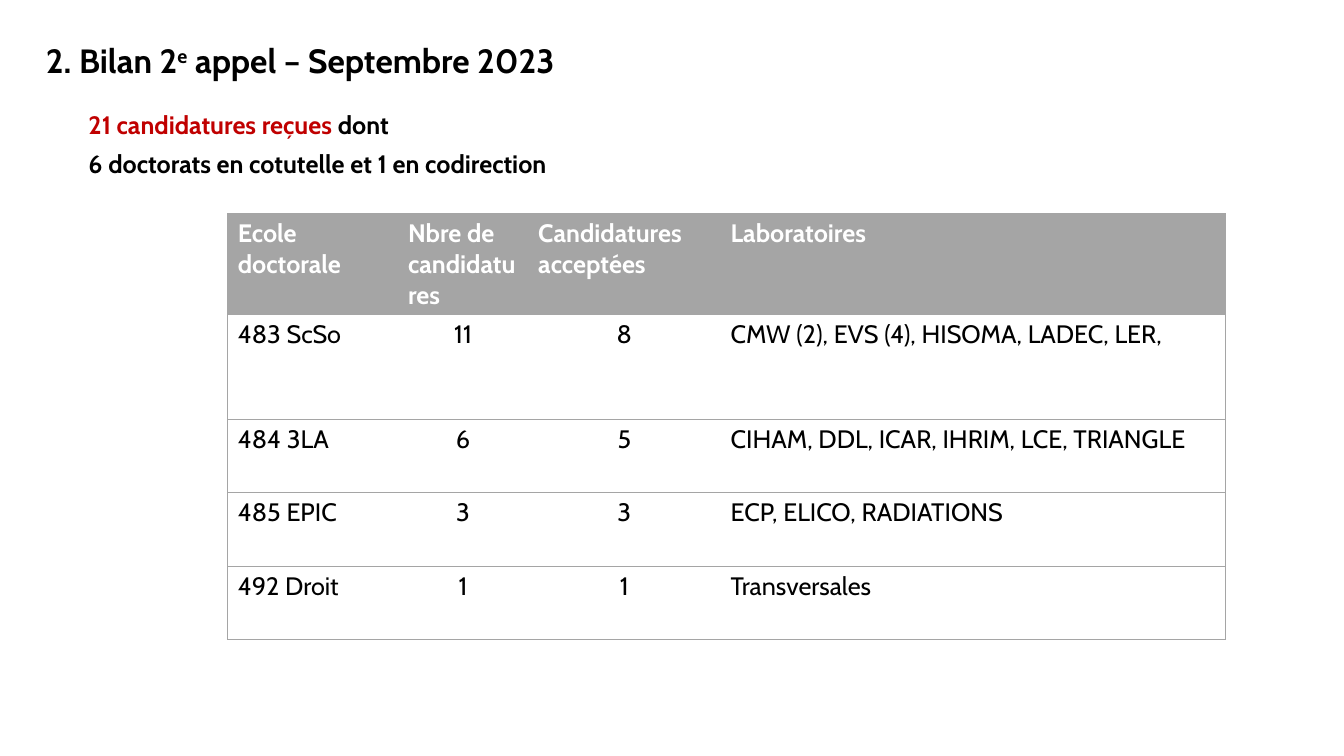
from pptx import Presentation
from pptx.dml.color import RGBColor
from pptx.enum.text import PP_ALIGN
from pptx.oxml import parse_xml
from pptx.oxml.ns import nsdecls
from pptx.util import Cm, Pt

FONT = "Cabin"
HEX = {"ink": "000000", "red": "C00000", "gray": "A5A5A5", "white": "FFFFFF"}
COLS = [4.29, 3.28, 4.85, 12.73]
ROWS = [1.85, 2.64, 1.85, 1.85, 1.85]
DATA = [
    ["Ecole doctorale", "Nbre de candidatures", "Candidatures acceptées", "Laboratoires"],
    ["483 ScSo", "11", "8", "CMW (2), EVS (4), HISOMA, LADEC, LER,"],
    ["484 3LA", "6", "5", "CIHAM, DDL, ICAR, IHRIM, LCE, TRIANGLE"],
    ["485 EPIC", "3", "3", "ECP, ELICO, RADIATIONS"],
    ["492 Droit", "1", "1", "Transversales"],
]


def add_run(para, text, size=18, color="ink", bold=True, base=0):
    run = para.add_run()
    run.text = text
    font = run.font
    font.name, font.size, font.bold = FONT, Pt(size), bold
    font.color.rgb = RGBColor.from_string(HEX[color])
    if base:
        run._r.get_or_add_rPr().set("baseline", str(base * 1000))


def add_box(slide, left, top, width, height, paras):
    """Each paragraph is a list of (text, format) pairs."""
    frame = slide.shapes.add_textbox(Cm(left), Cm(top), Cm(width), Cm(height)).text_frame
    frame.word_wrap = True
    for i, runs in enumerate(paras):
        para = frame.add_paragraph() if i else frame.paragraphs[0]
        para.space_after = Pt(6)
        for text, style in runs:
            add_run(para, text, **style)


def set_lines(cell, sides):
    """Draw gray lines on the given sides and none on the others."""
    props = cell._tc.get_or_add_tcPr()
    for side in "LRTB":
        if side in sides:
            paint = f'<a:solidFill><a:srgbClr val="{HEX["gray"]}"/></a:solidFill>'
        else:
            paint = "<a:noFill/>"
        props.append(parse_xml(
            f'<a:ln{side} {nsdecls("a")} w="{Pt(0.5)}">{paint}</a:ln{side}>'))


def add_grid(slide, left, top):
    shape = slide.shapes.add_table(len(ROWS), len(COLS), Cm(left), Cm(top),
                                   Cm(sum(COLS)), Cm(sum(ROWS)))
    table = shape.table
    table.horz_banding = False
    for col, width in zip(table.columns, COLS):
        col.width = Cm(width)
    for row, height in zip(table.rows, ROWS):
        row.height = Cm(height)
    for r, texts in enumerate(DATA):
        for c, text in enumerate(texts):
            cell = table.cell(r, c)
            head = r == 0
            # Outer frame and row rules
            edge = {0: "L", len(COLS) - 1: "R"}.get(c, "")
            set_lines(cell, "TB" + edge)
            if head:
                cell.fill.solid()
                cell.fill.fore_color.rgb = RGBColor.from_string(HEX["gray"])
            else:
                cell.fill.background()
            # Counts are centred
            para = cell.text_frame.paragraphs[0]
            if not head and c in (1, 2):
                para.alignment = PP_ALIGN.CENTER
            add_run(para, text, color="white" if head else "ink", bold=head)


def main():
    deck = Presentation()
    deck.slide_width, deck.slide_height = Cm(33.87), Cm(19.05)
    slide = deck.slides.add_slide(deck.slide_layouts[6])

    # Title
    big = {"size": 24}
    add_box(slide, 0.91, 0.89, 32.03, 1.27, [
        [("2. Bilan 2", big), ("e", {"size": 24, "base": 30}),
         (" appel – Septembre 2023", big)]])

    # Results by doctoral school
    add_grid(slide, 5.74, 5.38)

    # Summary
    add_box(slide, 1.98, 2.64, 28.14, 2.74, [
        [("21 candidatures reçues ", {"color": "red"}), ("dont", {})],
        [("6 doctorats en cotutelle et 1 en codirection", {})]])

    deck.save("out.pptx")


if __name__ == "__main__":
    main()
